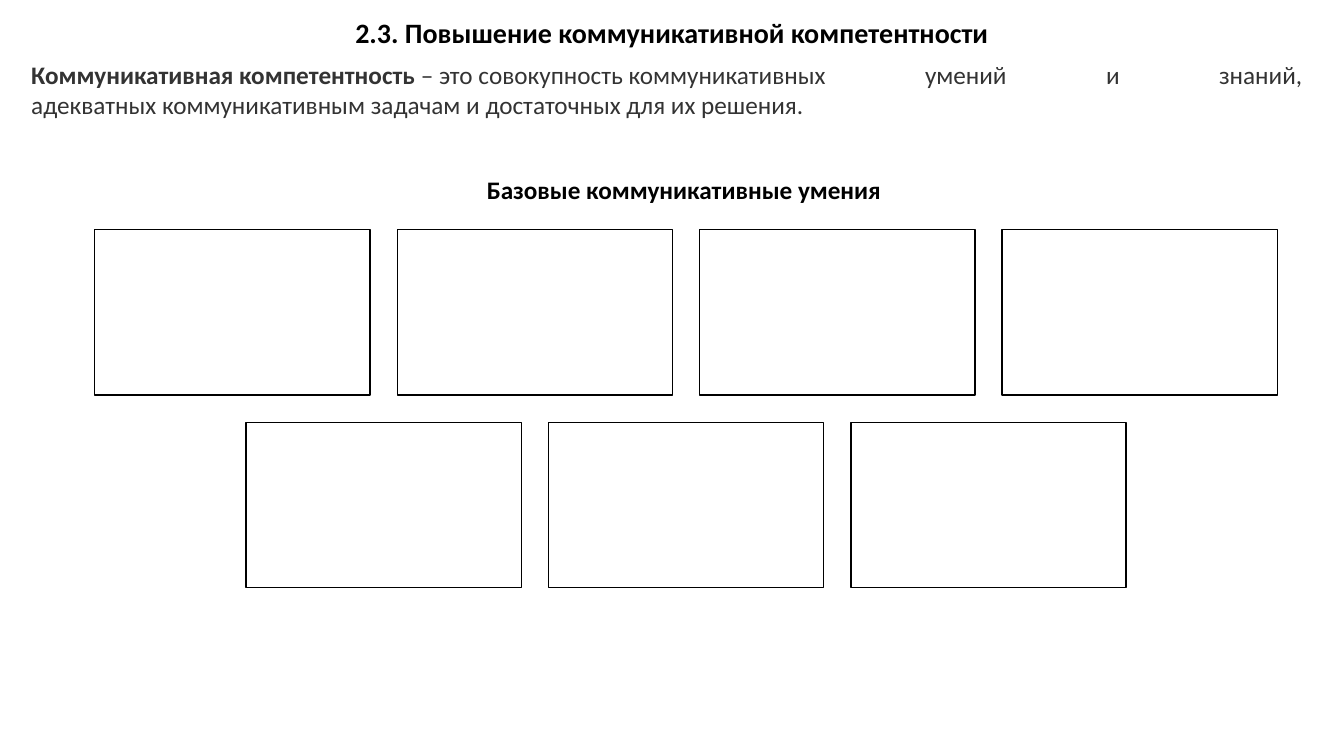
import pptx
import pptx.dml.color
import pptx.enum.shapes
import pptx.enum.text
import pptx.oxml.ns
import pptx.util
from pptx.util import Inches

BLACK = pptx.dml.color.RGBColor(0x00, 0x00, 0x00)
GREY = pptx.dml.color.RGBColor(0x33, 0x33, 0x33)
WHITE = pptx.dml.color.RGBColor(0xFF, 0xFF, 0xFF)
FONT = "Calibri"
ALIGN = pptx.enum.text.PP_ALIGN
HARD_SPACE = chr(160)


def unbroken(text):
    """Keep the words of a phrase together on one line."""
    return text.replace(" ", HARD_SPACE)


TITLE = "2.3. Повышение коммуникативной компетентности"
TERM = unbroken("Коммуникативная компетентность")
DEFINITION = (unbroken(" – это совокупность коммуникативных")
              + " умений и знаний, "
              + unbroken("адекватных коммуникативным задачам")
              + " и достаточных для их решения.")
SKILLS_HEADING = "Базовые коммуникативные умения"

SKILL_ROWS = (4, 3)
SKILL_WIDTH, SKILL_HEIGHT = Inches(2.73), Inches(1.64)
SKILL_GAP = Inches(0.27)


def place(shape, box):
    shape.left, shape.top, shape.width, shape.height = (Inches(n) for n in box)


def write_text(shape, runs, size, color, align, wrap):
    """Fill one paragraph with (text, bold) runs."""
    frame = shape.text_frame
    frame.word_wrap = wrap
    frame.auto_size = pptx.enum.text.MSO_AUTO_SIZE.NONE
    frame.vertical_anchor = pptx.enum.text.MSO_ANCHOR.TOP
    para = frame.paragraphs[0]
    para.alignment = align
    para.space_before = pptx.util.Pt(0)
    for text, bold in runs:
        span = para.add_run()
        span.text = text
        span.font.name = FONT
        span.font.size = pptx.util.Pt(size)
        span.font.bold = bold
        span.font.color.rgb = color
    return para


def add_title(page, box):
    title = page.shapes.title
    place(title, box)
    write_text(title, [(TITLE, True)], 20, BLACK, ALIGN.CENTER, False)


def add_definition(page, box):
    body = page.placeholders[1]
    place(body, box)
    para = write_text(body, [(TERM, True), (DEFINITION, False)],
                      18, GREY, ALIGN.JUSTIFY, True)
    # Plain paragraph: no bullet, no hanging indent
    properties = para._p.get_or_add_pPr()
    properties.set("marL", "0")
    properties.set("indent", "0")
    properties.append(pptx.oxml.parse_xml(
        "<a:buNone %s/>" % pptx.oxml.ns.nsdecls("a")))


def add_skills_heading(page, box):
    heading = page.shapes.add_textbox(*(Inches(n) for n in box))
    write_text(heading, [(SKILLS_HEADING, True)], 18, BLACK, ALIGN.LEFT, False)


def add_skill_boxes(page, box):
    """Rows of equal empty boxes, each row centred in the given box."""
    left, top, width = (Inches(n) for n in box)
    group = page.shapes.add_group_shape()
    for row, count in enumerate(SKILL_ROWS):
        row_width = count * SKILL_WIDTH + (count - 1) * SKILL_GAP
        row_left = left + (width - row_width) // 2
        row_top = top + row * (SKILL_HEIGHT + SKILL_GAP)
        for column in range(count):
            skill = group.shapes.add_shape(
                pptx.enum.shapes.MSO_SHAPE.RECTANGLE,
                row_left + column * (SKILL_WIDTH + SKILL_GAP), row_top,
                SKILL_WIDTH, SKILL_HEIGHT)
            skill.shadow.inherit = False
            skill.fill.solid()
            skill.fill.fore_color.rgb = WHITE
            skill.line.color.rgb = BLACK
            skill.line.width = pptx.util.Pt(1)


def main():
    deck = pptx.Presentation()
    deck.slide_width, deck.slide_height = Inches(13.33), Inches(7.5)
    page = deck.slides.add_slide(deck.slide_layouts[1])
    page.background.fill.solid()
    page.background.fill.fore_color.rgb = WHITE

    add_title(page, (3.4, 0.1, 6.53, 0.44))
    add_definition(page, (0.21, 0.54, 12.81, 0.71))
    add_skills_heading(page, (4.73, 1.68, 4.15, 0.4))
    add_skill_boxes(page, (0.93, 2.28, 11.75))
    deck.save("out.pptx")


if __name__ == "__main__":
    main()
